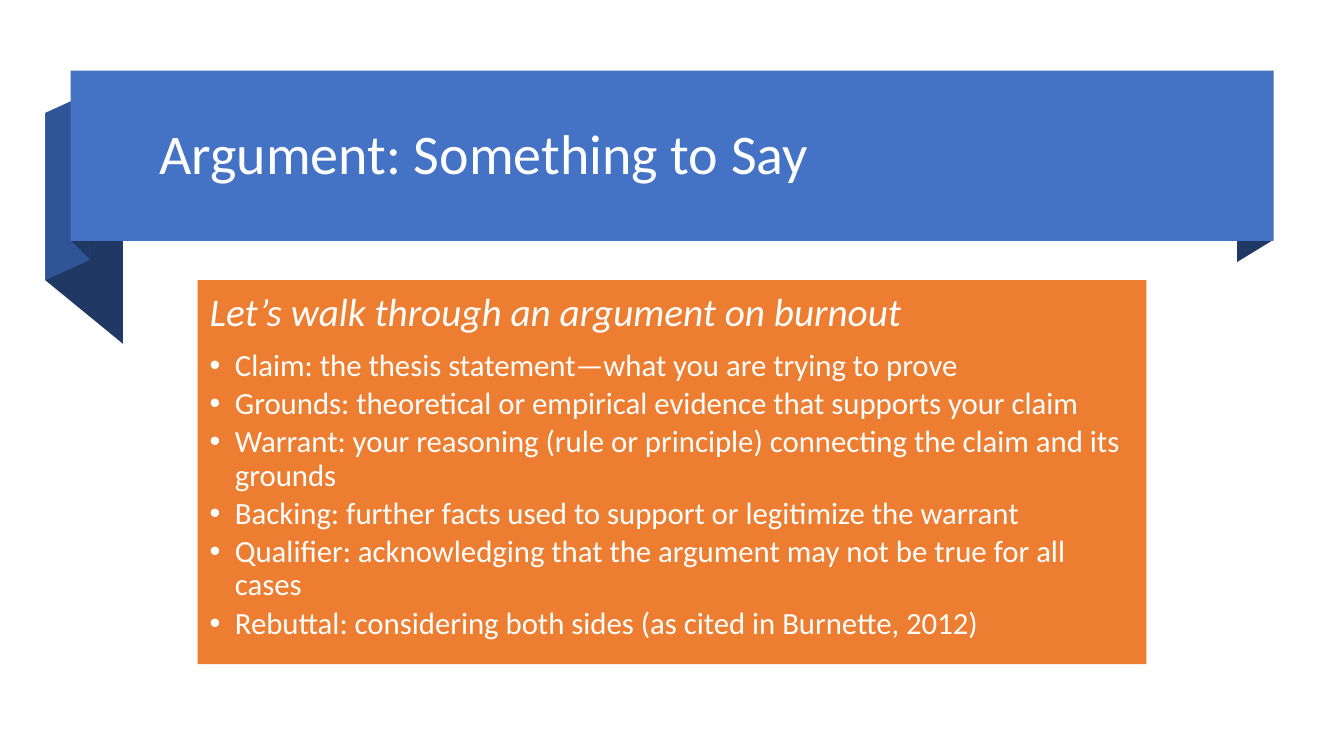
from lxml import etree
from pptx import Presentation
from pptx.dml.color import RGBColor
from pptx.enum.shapes import MSO_SHAPE
from pptx.enum.text import MSO_ANCHOR, MSO_AUTO_SIZE, PP_ALIGN
from pptx.oxml.ns import qn
from pptx.util import Pt

PX = 9144  # EMU per px, 100 px to the inch
RECT = MSO_SHAPE.RECTANGLE
LEFT = PP_ALIGN.LEFT
TOP, MIDDLE = MSO_ANCHOR.TOP, MSO_ANCHOR.MIDDLE
NO_FIT = MSO_AUTO_SIZE.NONE
FONT = "Calibri"
COLORS = {
    "band": "4472C4",
    "fold": "2F5597",
    "shade": "203864",
    "panel": "ED7D31",
    "text": "FFFFFF",
}
FOLDS = [
    ("shade", [(1263, 238), (1227, 260), (1227, 91), (1263, 70)]),
    ("shade", [(122, 341), (45, 278), (45, 112), (122, 175)]),
    ("fold", [(89, 258), (45, 278), (45, 112), (89, 92)]),
    ("shade", [(89, 257), (71, 239), (71, 70), (89, 89)]),
]
TITLE = "Argument: Something to Say"
LEAD = "Let’s walk through an argument on burnout"
POINTS = [
    "Claim: the thesis statement—what you are trying to prove",
    "Grounds: theoretical or empirical evidence that supports your claim",
    "Warrant: your reasoning (rule or principle) connecting the claim and its grounds",
    "Backing: further facts used to support or legitimize the warrant",
    "Qualifier: acknowledging that the argument may not be true for all cases",
    "Rebuttal: considering both sides (as cited in Burnette, 2012)",
]


def color(name):
    return RGBColor.from_string(COLORS[name])


def paint(shape, name):
    shape.fill.solid()
    shape.fill.fore_color.rgb = color(name)
    shape.line.fill.background()
    shape.shadow.inherit = False


def add_fold(slide, name, points):
    pen = slide.shapes.build_freeform(*points[0], scale=PX)
    pen.add_line_segments(points[1:], close=True)
    paint(pen.convert_to_shape(), name)


def add_box(slide, name, *box):
    shape = slide.shapes.add_shape(RECT, *(n * PX for n in box))
    paint(shape, name)
    return shape


def set_frame(frame, anchor):
    frame.word_wrap = True
    frame.auto_size = NO_FIT
    frame.vertical_anchor = anchor


def write(para, text, size, after=0, italic=False):
    para.alignment = LEFT
    para.line_spacing = 0.9
    para.space_before = Pt(0)
    para.space_after = Pt(after)
    run = para.add_run()
    run.text = text
    run.font.name = FONT
    run.font.size = Pt(size)
    run.font.italic = italic
    run.font.color.rgb = color("text")


def add_bullet(para):
    props = para._p.get_or_add_pPr()
    props.set("marL", str(25 * PX))
    props.set("indent", str(-25 * PX))
    etree.SubElement(props, qn("a:buFont")).set("typeface", "Arial")
    etree.SubElement(props, qn("a:buChar")).set("char", "•")


def set_title(slide):
    title = slide.shapes.title
    title.left, title.top, title.width, title.height = (
        n * PX for n in (148, 83, 1094, 145))
    set_frame(title.text_frame, MIDDLE)
    write(title.text_frame.paragraphs[0], TITLE, 40)
    slide.shapes._spTree.append(title._element)  # bring above the ribbon


def add_panel(slide):
    frame = add_box(slide, "panel", 196, 278, 941, 381).text_frame
    set_frame(frame, TOP)
    frame.margin_left = frame.margin_right = 12 * PX
    frame.margin_top = frame.margin_bottom = 12 * PX
    write(frame.paragraphs[0], LEAD, 28, 10.7, italic=True)
    for point in POINTS:
        para = frame.add_paragraph()
        write(para, point, 22, 3.6)
        add_bullet(para)


def main():
    deck = Presentation()
    deck.slide_width, deck.slide_height = 1333 * PX, 750 * PX
    slide = deck.slides.add_slide(deck.slide_layouts[5])

    # Ribbon: folded ends behind, band in front
    for name, points in FOLDS:
        add_fold(slide, name, points)
    add_box(slide, "band", 70, 70, 1193, 169)

    # Text
    set_title(slide)
    add_panel(slide)
    deck.save("out.pptx")


if __name__ == "__main__":
    main()
